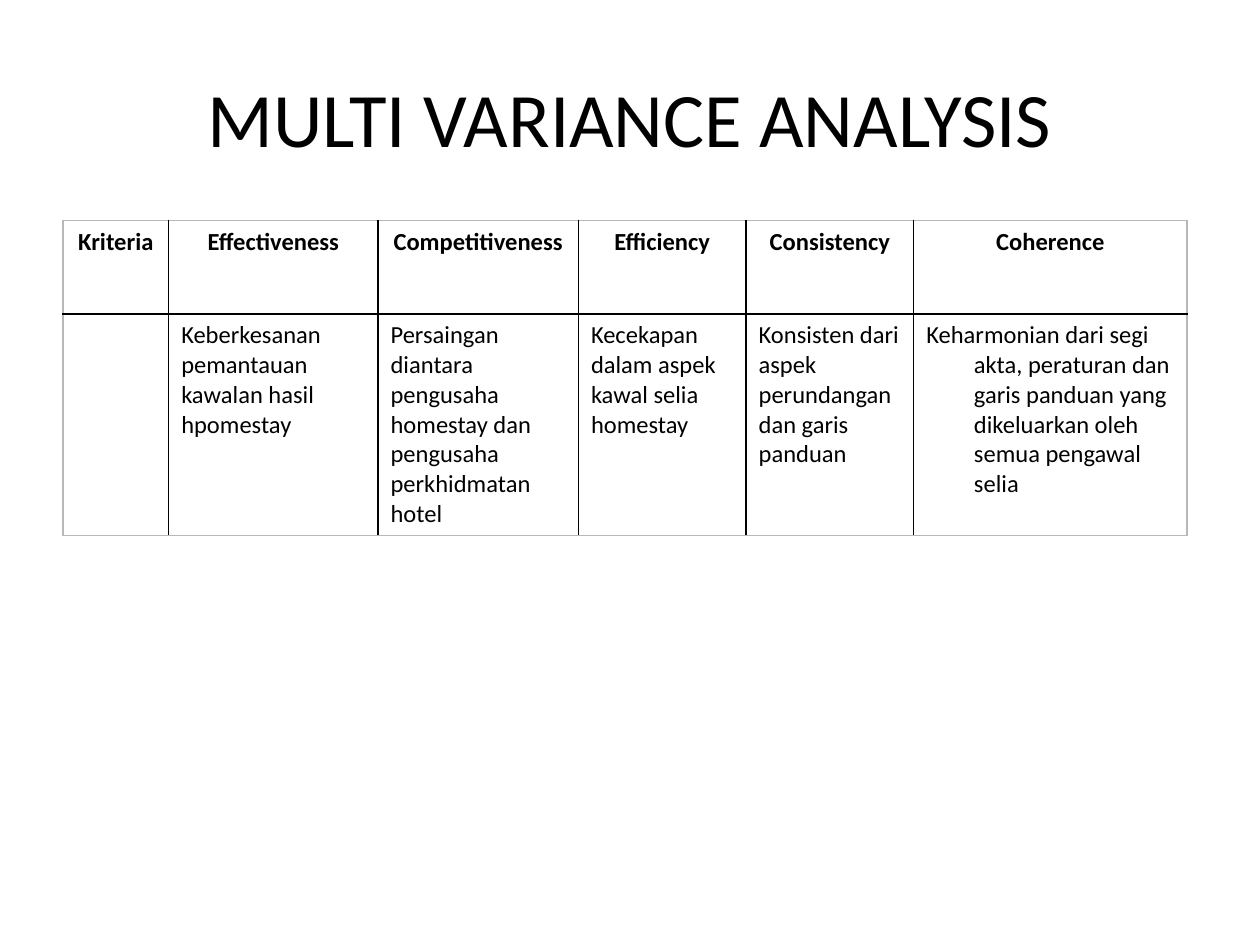
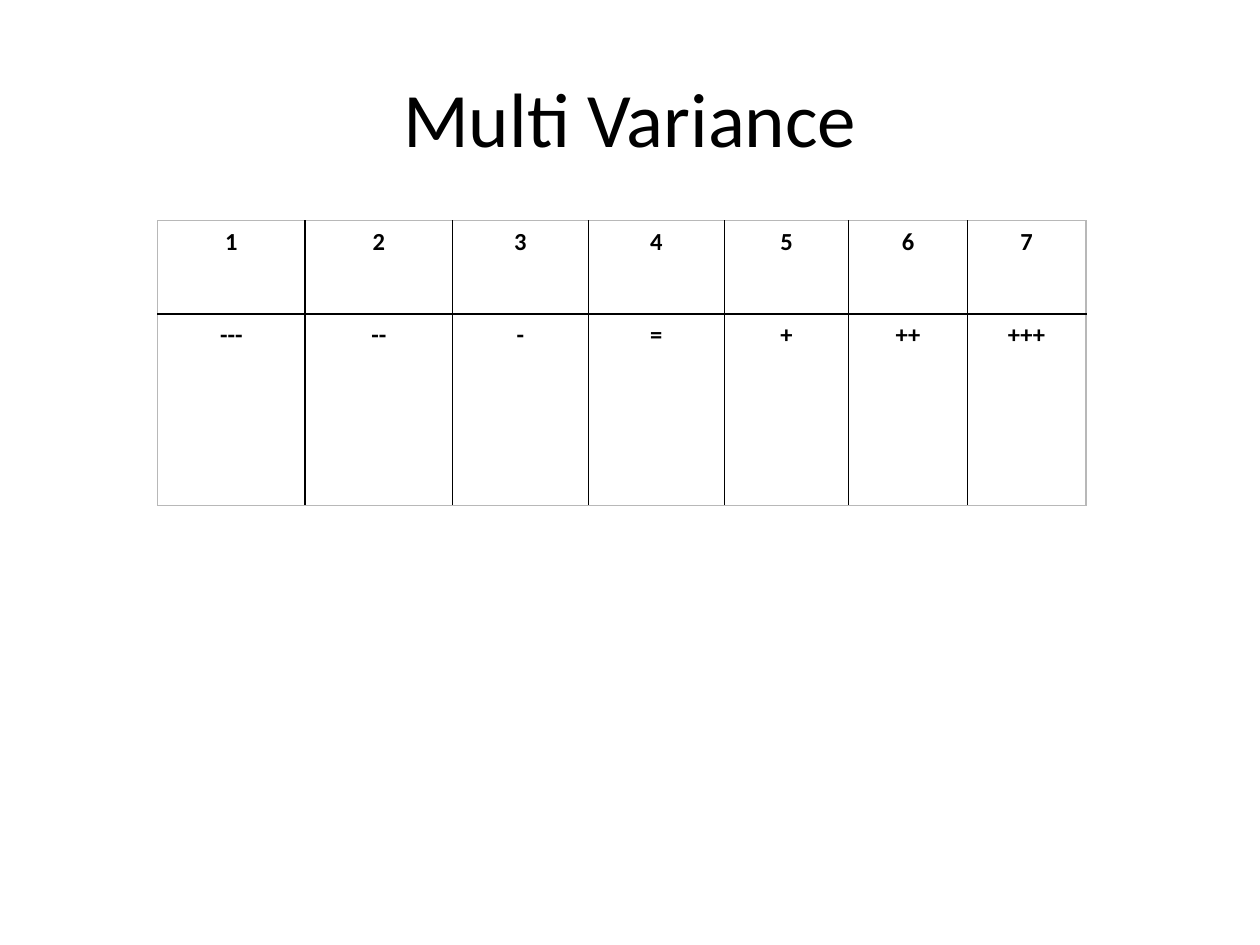
from lxml.etree import SubElement
from pptx import Presentation
from pptx.dml.color import RGBColor
from pptx.enum.text import MSO_ANCHOR as Anchor, PP_ALIGN as Align
from pptx.oxml.ns import qn
from pptx.util import Cm, Pt

BLACK = RGBColor(0x00, 0x00, 0x00)
GREY = RGBColor(0xB8, 0xB8, 0xB8)
FONT = "Calibri"
TITLE_ONLY = 5
TITLE_PLACE = {"left": Cm(1.27), "top": Cm(0.76), "width": Cm(22.86), "height": Cm(3.18)}
TITLE_FORMAT = {"name": FONT, "size": Pt(44), "bold": False}
HEAD_FORMAT = {"name": FONT, "size": Pt(14), "bold": True}
BODY_FORMAT = {**HEAD_FORMAT, "bold": False}
PLAIN_TABLE = {"first_row": False, "horz_banding": False}
TABLE_TOP = Cm(4.45)
ROW_HEIGHTS = (Cm(1.88), Cm(3.86))
HANGING = Cm(0.96)
BORDER_WIDTH = Pt(1)

CRITERIA = (
    ("Kriteria", "Effectiveness", "Competitiveness", "Efficiency", "Consistency", "Coherence"),
    (
        "",
        "Keberkesanan pemantauan kawalan hasil hpomestay",
        "Persaingan diantara pengusaha homestay dan pengusaha perkhidmatan hotel",
        "Kecekapan dalam aspek kawal selia homestay",
        "Konsisten dari aspek perundangan dan garis panduan",
        "Keharmonian dari segi akta, peraturan dan garis panduan yang "
        "dikeluarkan oleh semua pengawal selia",
    ),
)
CRITERIA_WIDTHS = (2.13, 4.22, 4.04, 3.38, 3.38, 5.51)

SCALE = (
    tuple(str(score) for score in range(1, 8)),
    ("---", "--", "-", "=", "+", "++", "+++"),
)
SCALE_WIDTHS = (2.97, 2.97, 2.74, 2.74, 2.51, 2.39, 2.39)


def apply(target, values):
    for name, value in values.items():
        setattr(target, name, value)


def write(para, text, font_format, align):
    para.alignment = align
    span = para.add_run()
    span.text = text
    apply(span.font, font_format)
    span.font.color.rgb = BLACK


def add_titled_page(deck, text):
    page = deck.slides.add_slide(deck.slide_layouts[TITLE_ONLY])
    title = page.shapes.title
    apply(title, TITLE_PLACE)
    title.text_frame.vertical_anchor = Anchor.MIDDLE
    write(title.text_frame.paragraphs[0], text, TITLE_FORMAT, Align.CENTER)
    return page


def hang(para):
    properties = para._p.get_or_add_pPr()
    properties.set("marL", str(HANGING))
    properties.set("indent", str(-HANGING))


def draw_borders(cell, outer_sides):
    properties = cell._tc.get_or_add_tcPr()
    for side, is_outer in outer_sides.items():
        line = SubElement(properties, qn(f"a:ln{side}"), w=str(BORDER_WIDTH))
        fill = SubElement(line, qn("a:solidFill"))
        SubElement(fill, qn("a:srgbClr"), val=str(GREY if is_outer else BLACK))


def add_grid(page, left, widths, rows, body_format, body_align, hanging_columns):
    columns = [Cm(width) for width in widths]
    frame = page.shapes.add_table(
        len(rows), len(columns), left, TABLE_TOP, sum(columns), sum(ROW_HEIGHTS)
    )
    table = frame.table
    apply(table, PLAIN_TABLE)
    for column, width in zip(table.columns, columns):
        column.width = width
    for row, height in zip(table.rows, ROW_HEIGHTS):
        row.height = height
    last_row, last_column = len(rows) - 1, len(columns) - 1
    for r, texts in enumerate(rows):
        font_format, align = (body_format, body_align) if r else (HEAD_FORMAT, Align.CENTER)
        for c, text in enumerate(texts):
            cell = table.cell(r, c)
            draw_borders(
                cell,
                {"L": c == 0, "R": c == last_column, "T": r == 0, "B": r == last_row},
            )
            cell.fill.background()
            if text:
                para = cell.text_frame.paragraphs[0]
                write(para, text, font_format, align)
                if r and c in hanging_columns:
                    hang(para)


def main():
    deck = Presentation()
    apply(deck, {"slide_width": Cm(25.4), "slide_height": Cm(19.05)})

    page = add_titled_page(deck, "MULTI VARIANCE ANALYSIS")
    add_grid(page, Cm(1.27), CRITERIA_WIDTHS, CRITERIA, BODY_FORMAT, Align.LEFT, {5})

    page = add_titled_page(deck, "Multi Variance")
    add_grid(page, Cm(3.18), SCALE_WIDTHS, SCALE, HEAD_FORMAT, Align.CENTER, {5, 6})

    deck.save("out.pptx")


if __name__ == "__main__":
    main()
